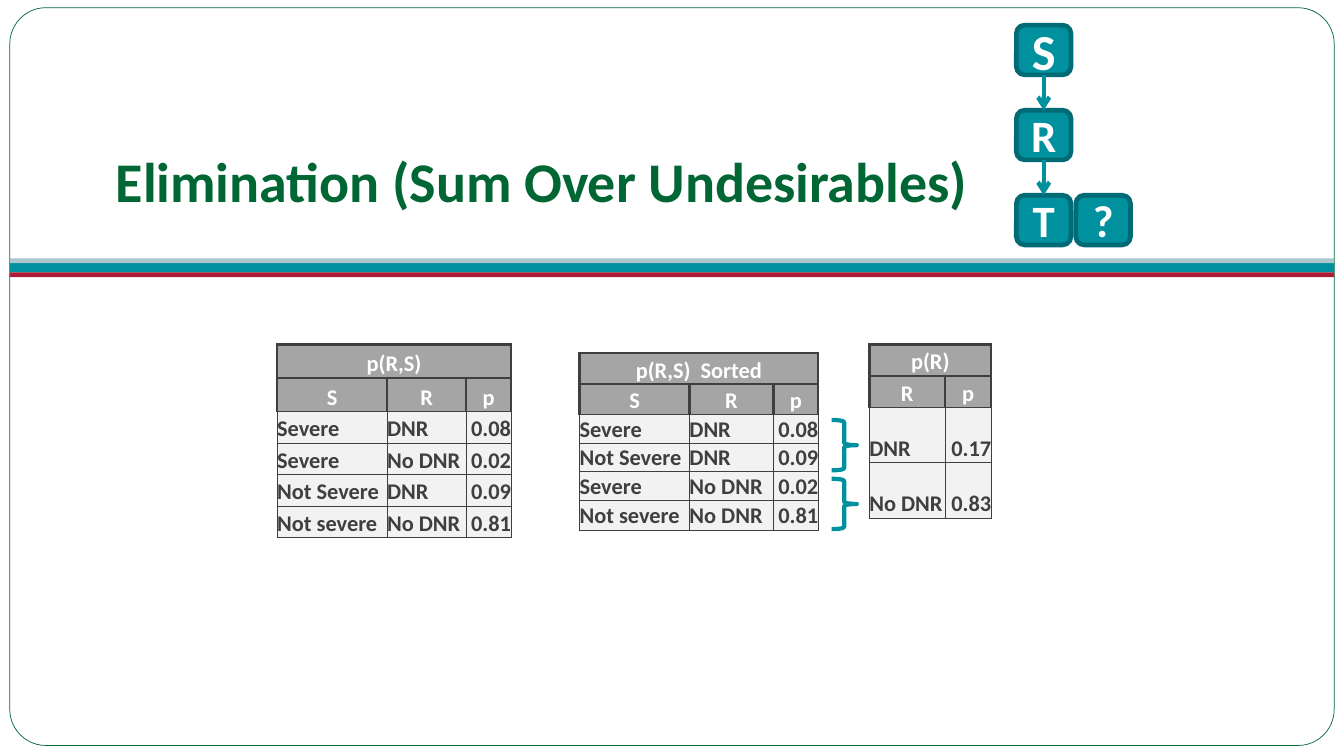
"""Build the slide on eliminating a variable by summing over undesirables."""
from dataclasses import dataclass

from lxml.etree import SubElement
from pptx import Presentation
from pptx.dml.color import RGBColor
from pptx.enum.shapes import MSO_CONNECTOR, MSO_SHAPE
from pptx.enum.text import MSO_ANCHOR, PP_ALIGN
from pptx.oxml.ns import qn
from pptx.util import Pt


@dataclass(frozen=True)
class Theme:
    font: str = "Calibri"
    green: str = "006633"
    teal: str = "00909E"
    dark_teal: str = "006B75"
    mist: str = "ABC6CC"
    red: str = "AC1D37"
    white: str = "FFFFFF"
    ink: str = "3F3F3F"
    header: str = "A5A5A5"
    body: str = "F2F2F2"
    title_size: int = 40
    start_size: int = 36
    node_size: int = 32
    table_size: int = 16


theme = Theme()


def write(frame, text, size, color, align):
    frame.text = text
    paragraph = frame.paragraphs[0]
    paragraph.alignment = align
    font = paragraph.runs[0].font
    font.name, font.size, font.bold = theme.font, Pt(size), True
    font.color.rgb = RGBColor.from_string(color)


def draw(shapes, preset, box, fill=None, line=None, width=0):
    shape = shapes.add_shape(preset, *map(Pt, box))
    shape.shadow.inherit = False
    if fill:
        shape.fill.solid()
        shape.fill.fore_color.rgb = RGBColor.from_string(fill)
    else:
        shape.fill.background()
    if line:
        shape.line.color.rgb = RGBColor.from_string(line)
        shape.line.width = Pt(width)
    else:
        shape.line.fill.background()
    return shape


deck = Presentation()
deck.slide_width, deck.slide_height = Pt(960), Pt(540)
slide = deck.slides.add_slide(deck.slide_layouts[5])

frame = draw(slide.shapes, MSO_SHAPE.ROUNDED_RECTANGLE, (7, 5.5, 946, 527),
             theme.white, theme.green, 0.5)
frame.adjustments[0] = 0.049
for top, height, color in [(187.5, 7, theme.teal), (184.5, 3.5, theme.mist),
                           (194.5, 3.5, theme.red)]:
    draw(slide.shapes, MSO_SHAPE.RECTANGLE, (7, top, 946, height), color)

title = slide.shapes.title
slide.shapes._spTree.append(title._element)
title.left, title.top, title.width, title.height = Pt(75.5), Pt(75), Pt(816), Pt(107)
title.text_frame.vertical_anchor = MSO_ANCHOR.MIDDLE
write(title.text_frame, "Elimination (Sum Over Undesirables)",
      theme.title_size, theme.green, PP_ALIGN.LEFT)

tables = [
    (198, 246, [78.5, 56.5, 32], [24, 24, 22.5, 22.5, 22.5, 22.5],
     [["p(R,S)"], ["S", "R", "p"],
      ["Severe", "DNR", "0.08"], ["Severe", "No DNR", "0.02"],
      ["Not Severe", "DNR", "0.09"], ["Not severe", "No DNR", "0.81"]]),
    (414, 252, [78.5, 60, 32], [22.5, 21.5, 21, 19.5, 21, 21],
     [["p(R,S)  Sorted"], ["S", "R", "p"],
      ["Severe", "DNR", "0.08"], ["Not Severe", "DNR", "0.09"],
      ["Severe", "No DNR", "0.02"], ["Not severe", "No DNR", "0.81"]]),
    (621, 246, [54, 33], [22.5, 22.5, 39.5, 39.5],
     [["p(R)"], ["R", "p"], ["DNR", "0.17"], ["No DNR", "0.83"]]),
]
for left, top, widths, heights, rows in tables:
    table = slide.shapes.add_table(len(rows), len(widths), Pt(left), Pt(top),
                                   Pt(sum(widths)), Pt(sum(heights))).table
    table.horz_banding = False
    for column, width in zip(table.columns, widths):
        column.width = Pt(width)
    for row, height in zip(table.rows, heights):
        row.height = Pt(height)
    last = len(widths) - 1
    table.cell(0, 0).merge(table.cell(0, last))
    for r, texts in enumerate(rows):
        is_header = r < 2
        for c in range(len(widths)):
            cell = table.cell(r, c)
            cell.margin_left = cell.margin_right = cell.margin_top = cell.margin_bottom = 0
            cell.vertical_anchor = MSO_ANCHOR.BOTTOM
            for side in "LRTB":
                thick = r == 0 or (r == 1 and side != "B")
                border = SubElement(cell._tc.get_or_add_tcPr(), qn(f"a:ln{side}"),
                                    w=str(Pt(2 if thick else 0.5)))
                SubElement(SubElement(border, qn("a:solidFill")),
                           qn("a:srgbClr"), val=theme.ink)
            cell.fill.solid()
            cell.fill.fore_color.rgb = RGBColor.from_string(
                theme.header if is_header else theme.body)
            if c < len(texts):
                align = (PP_ALIGN.CENTER if is_header
                         else PP_ALIGN.RIGHT if c == last else PP_ALIGN.LEFT)
                write(cell.text_frame, texts[c], theme.table_size,
                      theme.white if is_header else theme.ink, align)

for top in (300, 342):
    draw(slide.shapes, MSO_SHAPE.RIGHT_BRACE, (594, top, 18, 36), line=theme.teal, width=3)

network = slide.shapes.add_group_shape().shapes
node_left, node_top, node_width, node_height, node_step = 726, 18, 39, 35.5, 60.75
for letter, column, level, size in [("T", 0, 2, theme.node_size),
                                    ("S", 0, 0, theme.start_size),
                                    ("R", 0, 1, theme.node_size),
                                    ("?", 1, 2, theme.node_size)]:
    node = draw(network, MSO_SHAPE.ROUNDED_RECTANGLE,
                (node_left + 42.5 * column, node_top + node_step * level,
                 node_width, node_height), theme.teal, theme.dark_teal, 3.35)
    node.text_frame.word_wrap = False
    node.text_frame.vertical_anchor = MSO_ANCHOR.MIDDLE
    write(node.text_frame, letter, size, theme.white, PP_ALIGN.CENTER)

for level in range(2):
    center = node_left + node_width / 2
    start = node_top + node_step * level + node_height
    arrow = network.add_connector(MSO_CONNECTOR.STRAIGHT, Pt(center), Pt(start), Pt(center),
                                  Pt(start + node_step - node_height))
    arrow.line.color.rgb = RGBColor.from_string(theme.teal)
    arrow.line.width = Pt(3)
    SubElement(arrow.line._get_or_add_ln(), qn("a:tailEnd"), type="arrow")
    SubElement(arrow._element.spPr, qn("a:effectLst"))

deck.save("out.pptx")
